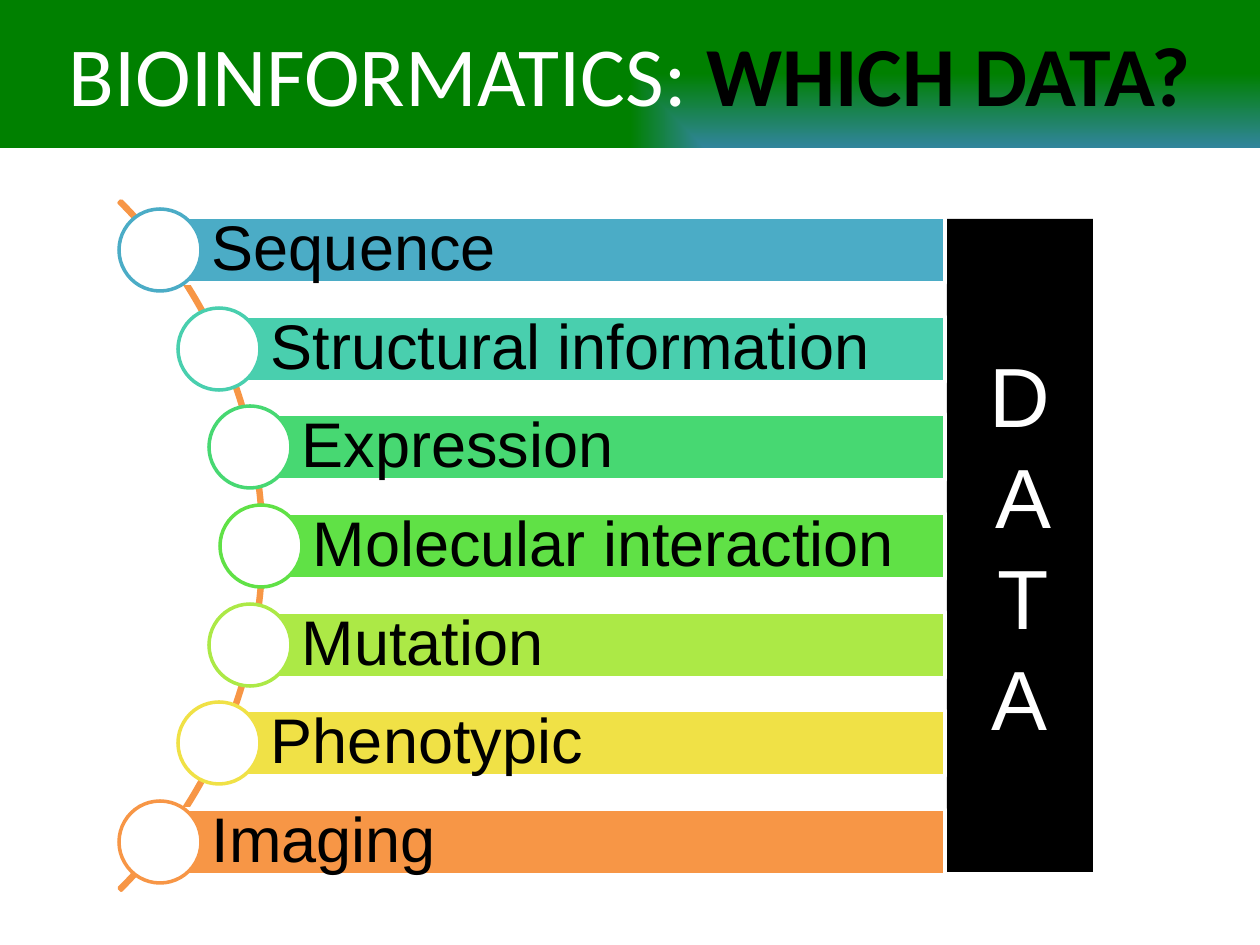
from math import sqrt

from lxml.etree import fromstring
from pptx import Presentation
from pptx.dml.color import RGBColor
from pptx.enum.shapes import MSO_SHAPE
from pptx.enum.text import MSO_ANCHOR, PP_ALIGN
from pptx.oxml.ns import nsdecls
from pptx.util import Pt

PX = 914400 / 126
THEME = {
    "white": "FFFFFF", "black": "000000", "arc": "F79646",
    "band": "008000", "glow": "31859C",
    "title_font": "Calibri", "body_font": "Arial",
    "title_size": 48, "row_size": 36, "line": 2,
}
ROWS = [
    ("Sequence", "4BACC6"),
    ("Structural information", "49CFAE"),
    ("Expression", "47D872"),
    ("Molecular interaction", "60E146"),
    ("Mutation", "ACE946"),
    ("Phenotypic", "F0E146"),
    ("Imaging", "F79646"),
]


def add_box(shapes, kind, box, fill=None, line=None):
    sp = shapes.add_shape(kind, *(round(v * PX) for v in box))
    sp.shadow.inherit = False
    if fill:
        sp.fill.solid()
        sp.fill.fore_color.rgb = RGBColor.from_string(fill)
    else:
        sp.fill.background()
    if line:
        sp.line.color.rgb = RGBColor.from_string(line)
        sp.line.width = Pt(THEME["line"])
    else:
        sp.line.fill.background()
    return sp


def add_text(sp, runs, size, font, align):
    tf = sp.text_frame
    tf.word_wrap = True
    tf.vertical_anchor = MSO_ANCHOR.MIDDLE
    p = tf.paragraphs[0]
    p.alignment = align
    for text, color, bold in runs:
        r = p.add_run()
        r.text = text
        for name, value in {"size": Pt(size), "name": font, "bold": bold}.items():
            setattr(r.font, name, value)
        r.font.color.rgb = RGBColor.from_string(color)
    return tf


prs = Presentation()
prs.slide_width, prs.slide_height = round(1260 * PX), round(945 * PX)
s = prs.slides.add_slide(prs.slide_layouts[6])

# Title band, its gradient spreading from the bottom right corner
sp = add_box(s.shapes, MSO_SHAPE.RECTANGLE, (0, -2, 1260, 150))
old_fill = sp.fill._xPr.find("{*}noFill")
old_fill.getparent().replace(old_fill, fromstring(
    f'<a:gradFill {nsdecls("a")} rotWithShape="1"><a:gsLst>'
    f'<a:gs pos="0"><a:srgbClr val="{THEME["glow"]}"/></a:gs>'
    f'<a:gs pos="100000"><a:srgbClr val="{THEME["band"]}"/></a:gs></a:gsLst>'
    '<a:path path="rect"><a:fillToRect l="100000" t="100000"/></a:path>'
    '</a:gradFill>'))
add_text(sp, [("BIOINFORMATICS: ", THEME["white"], False),
              ("WHICH DATA?", THEME["black"], True)],
         THEME["title_size"], THEME["title_font"], PP_ALIGN.CENTER)

# Stacked-letter panel
sp = add_box(s.shapes, MSO_SHAPE.RECTANGLE, (947, 219, 146, 653), THEME["black"])
tf = add_text(sp, [("DATA", THEME["white"], False)],
              THEME["title_size"], THEME["body_font"], PP_ALIGN.CENTER)
tf._txBody.bodyPr.set("vert", "wordArtVert")

# Arc behind the list
grp = s.shapes.add_group_shape()
sp = add_box(grp.shapes, MSO_SHAPE.BLOCK_ARC, (-711, 58, 975, 975), line=THEME["arc"])
for i, value in enumerate((189, 27, 0.003)):
    sp.adjustments[i] = value

# Bars, each starting at the centre of a bead that sits on the arc
MID_Y, SPAN, BAR_H, BEAD, RIGHT = 546, 296, 66, 82, 945
ARC_X, ARC_R = -225, 486
for i, (label, color) in enumerate(ROWS):
    dy = (i - 3) * SPAN / 3
    x, y = int(ARC_X + sqrt(ARC_R ** 2 - dy ** 2)), round(MID_Y + dy)
    bar = add_box(grp.shapes, MSO_SHAPE.RECTANGLE,
                  (x, y - BAR_H // 2, RIGHT - x, BAR_H), color, THEME["white"])
    tf = add_text(bar, [(label, THEME["black"], False)],
                  THEME["row_size"], THEME["body_font"], PP_ALIGN.LEFT)
    for side, inset in {"left": 52, "top": 12, "right": 12, "bottom": 12}.items():
        setattr(tf, f"margin_{side}", round(inset * PX))
    tf.paragraphs[0].line_spacing = 0.9
    add_box(grp.shapes, MSO_SHAPE.OVAL,
            (x - BEAD // 2, y - BEAD // 2, BEAD, BEAD), THEME["white"], color)

prs.save("out.pptx")
